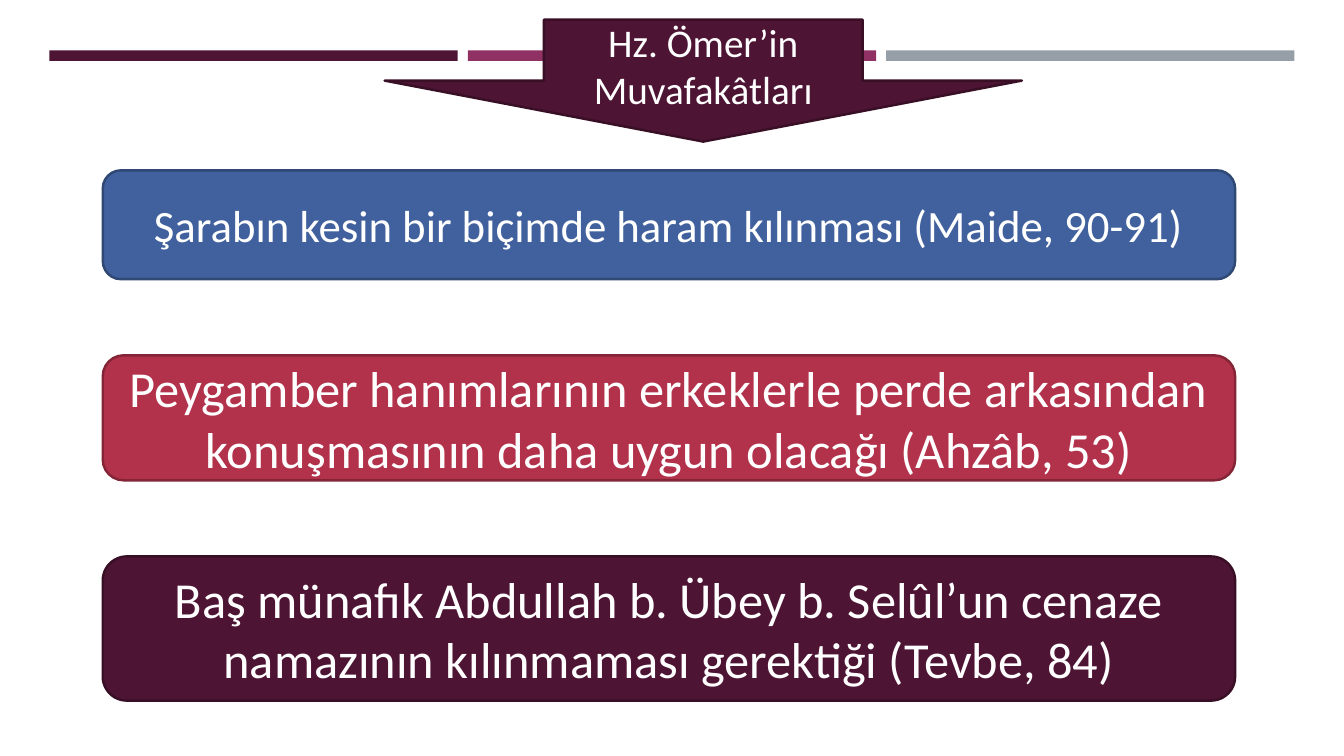
import pptx
import pptx.dml.color
import pptx.enum.shapes
import pptx.enum.text
import pptx.oxml.ns
import pptx.util

COLORS = {
    "plum": "4D1434",
    "plum_edge": "390F26",
    "magenta": "903163",
    "gray": "969FA7",
    "blue": "40619D",
    "blue_edge": "2F4874",
    "red": "B2324B",
    "red_edge": "842537",
    "white": "FFFFFF",
}
SHAPES = pptx.enum.shapes.MSO_SHAPE


class Page:
    font_format = {"name": "Calibri", "bold": False}
    frame_format = {
        "word_wrap": True,
        "vertical_anchor": pptx.enum.text.MSO_ANCHOR.MIDDLE,
    }

    def __init__(self, deck):
        self.width = deck.slide_width
        self.height = deck.slide_height
        self.slide = deck.slides.add_slide(deck.slide_layouts[6])

    def across(self, percent):
        return round(self.width * percent / 100)

    def down(self, percent):
        return round(self.height * percent / 100)

    def color(self, name):
        return pptx.dml.color.RGBColor.from_string(COLORS[name])

    def shape(self, kind, left, top, width, height, fill, edge=None):
        box = self.slide.shapes.add_shape(
            kind, self.across(left), self.down(top), self.across(width), self.down(height)
        )
        box.shadow.inherit = False
        box.fill.solid()
        box.fill.fore_color.rgb = self.color(fill)
        if edge:
            box.line.color.rgb = self.color(edge)
            box.line.width = pptx.util.Pt(1.75)
        else:
            box.line.fill.background()
        return box

    def label(self, box, text, size):
        frame = box.text_frame
        for key, value in self.frame_format.items():
            setattr(frame, key, value)
        para = frame.paragraphs[0]
        para.alignment = pptx.enum.text.PP_ALIGN.CENTER
        span = para.add_run()
        span.text = text
        for key, value in self.font_format.items():
            setattr(span.font, key, value)
        span.font.size = pptx.util.Pt(size)
        span.font.color.rgb = self.color("white")

    def bar(self, left, top, width, height, fill):
        self.shape(SHAPES.RECTANGLE, left, top, width, height, fill)

    def card(self, left, top, width, height, fill, text, size):
        box = self.shape(
            SHAPES.ROUNDED_RECTANGLE, left, top, width, height, fill, fill + "_edge"
        )
        self.label(box, text, size)

    def title_arrow(self, left, top, width, height, fill, text, size):
        box = self.shape(
            SHAPES.RIGHT_ARROW, left, top, width, height, fill, fill + "_edge"
        )
        shift = (box.width - box.height) // 2
        box.left, box.top = box.left + shift, box.top - shift
        box.width, box.height = box.height, box.width
        box.rotation = 90
        self.label(box, text, size)
        body = box.element.find(".//" + pptx.oxml.ns.qn("a:bodyPr"))
        body.set("vert", "vert270")


def main():
    deck = pptx.Presentation()
    deck.slide_width = pptx.util.Inches(13.33)
    deck.slide_height = pptx.util.Inches(7.5)
    page = Page(deck)

    for column, fill in enumerate(("plum", "magenta", "gray")):
        page.bar(3.68 + column * 31.13, 6.67, 30.38, 1.4, fill)

    page.title_arrow(28.62, 2.6, 47.41, 16.13, "plum", "Hz. Ömer’in Muvafakâtları", 28)

    cards = (
        (14.4, "blue", 32, "Şarabın kesin bir biçimde haram kılınması (Maide, 90-91)"),
        (16.53, "red", 36, "Peygamber hanımlarının erkeklerle perde arkasından "
                           "konuşmasının daha uygun olacağı (Ahzâb, 53)"),
        (19.07, "plum", 36, "Baş münafık Abdullah b. Übey b. Selûl’un cenaze "
                            "namazının kılınmaması gerektiği (Tevbe, 84)"),
    )
    top = 22.53
    gap = 10.07
    for height, fill, size, text in cards:
        page.card(7.65, top, 84.25, height, fill, text, size)
        top += height + gap

    deck.save("out.pptx")


if __name__ == "__main__":
    main()
